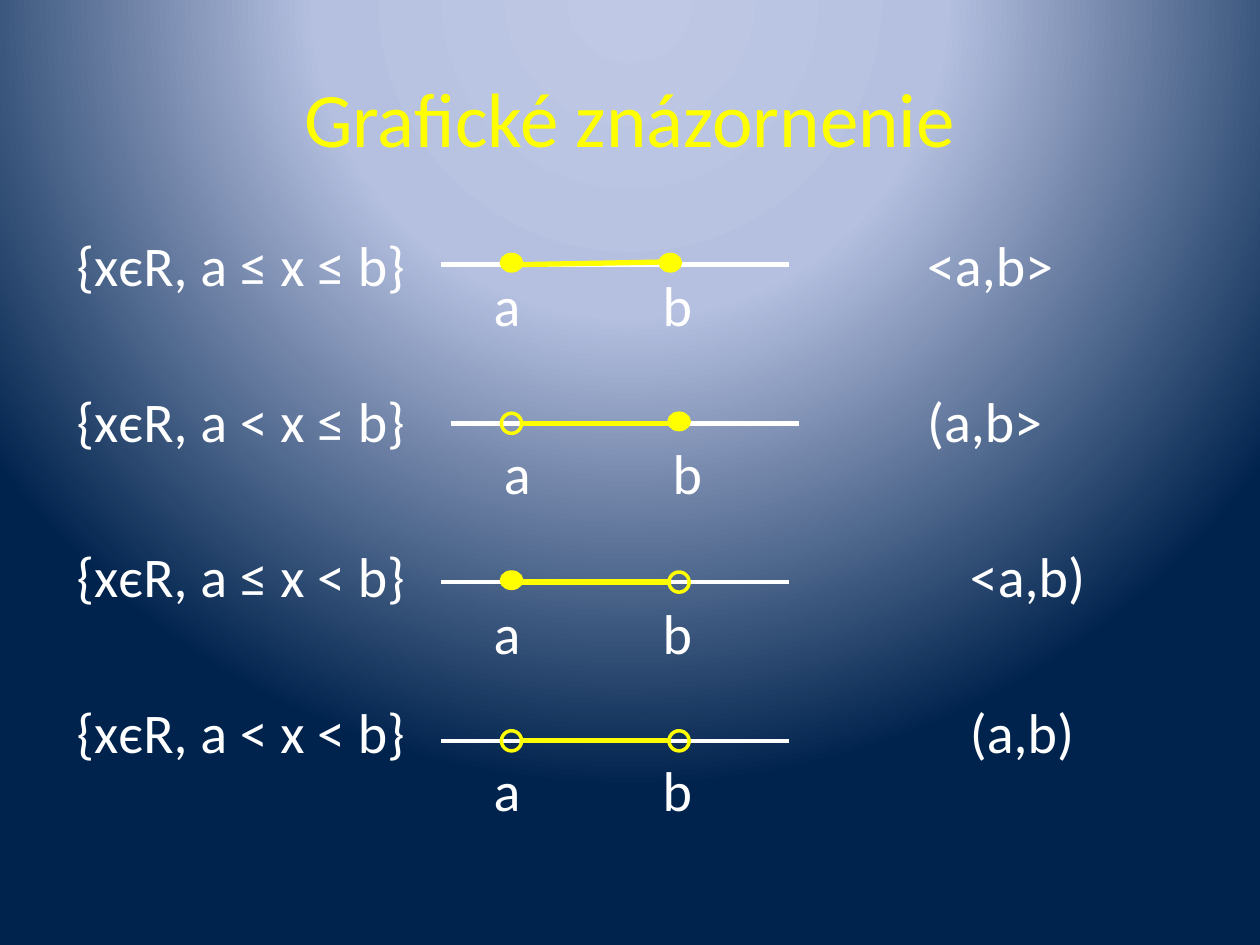
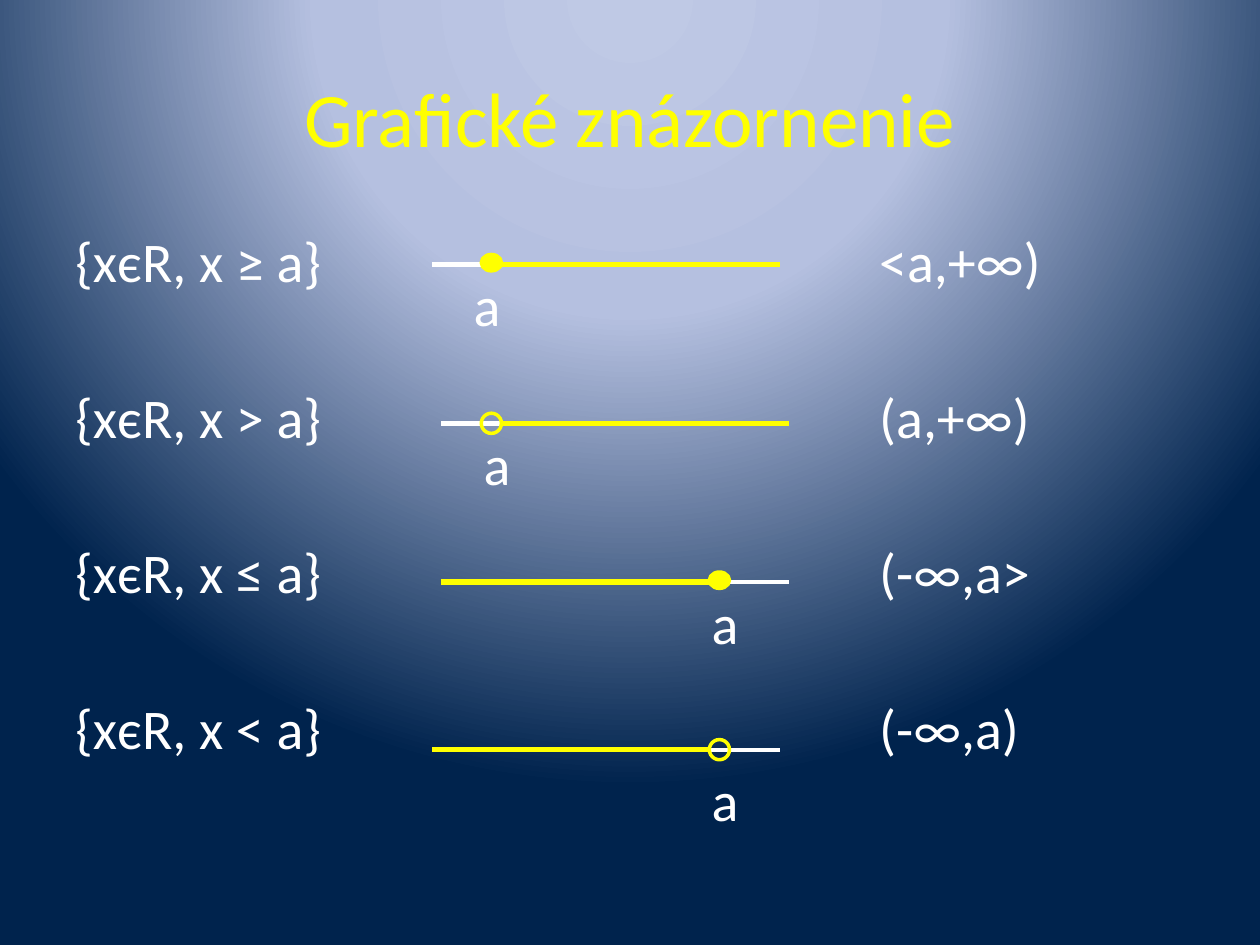
from dataclasses import dataclass

from lxml import etree
from pptx import Presentation
from pptx.dml.color import RGBColor
from pptx.enum.shapes import MSO_CONNECTOR, MSO_SHAPE
from pptx.enum.text import MSO_ANCHOR, PP_ALIGN
from pptx.oxml import parse_xml
from pptx.oxml.ns import nsdecls, qn
from pptx.util import Inches, Pt

STRAIGHT = MSO_CONNECTOR.STRAIGHT
OVAL = MSO_SHAPE.OVAL
MIDDLE = MSO_ANCHOR.MIDDLE
CENTER = PP_ALIGN.CENTER

FONT = "Calibri"
WHITE = "FFFFFF"
YELLOW = "FFFF00"
BACKGROUND_STOPS = [(0, "BFC9E5"), (40, "B5C0E0"), (100, "00234D")]

TITLE = "Grafické znázornenie"
AXIS_LENGTH = 2.76
FIRST_AXIS = 2.1
ROW_PITCH = 1.26
DOT_SIZE = 0.16
CLOSED_DOT_HEIGHT = 0.13
ROW_SPACING = 50.5


def color(hex_string):
    return RGBColor.from_string(hex_string)


@dataclass
class Point:
    letter: str
    dot_left: float
    label_left: float
    closed: bool


@dataclass
class Row:
    """One interval: set notation, interval notation and its number line."""
    set_text: str
    interval_text: str
    interval_left: float
    axis_left: float
    label_drop: float
    points: list
    side: str = "between"
    axis_shift: float = 0
    rise: float = 0


class IntervalDeck:
    def __init__(self):
        self.deck = Presentation()
        self.deck.slide_width = Inches(10)
        self.deck.slide_height = Inches(7.5)
        self.page = None
        self.set_background()

    def set_background(self):
        fill = self.deck.slide_master.background.fill
        fill.gradient()
        stops = "".join(
            f'<a:gs pos="{percent * 1000}"><a:srgbClr val="{shade}"/></a:gs>'
            for percent, shade in BACKGROUND_STOPS)
        gradient = parse_xml(
            f'<a:gradFill {nsdecls("a")} rotWithShape="1"><a:gsLst>{stops}</a:gsLst>'
            '<a:path path="circle">'
            '<a:fillToRect l="50000" t="-80000" r="50000" b="180000"/>'
            '</a:path></a:gradFill>')
        common = self.deck.slide_master.element.find(qn("p:cSld"))
        previous = common.find(".//" + qn("a:gradFill"))
        previous.getparent().replace(previous, gradient)

    def style(self, paragraph, size, shade):
        paragraph.font.name = FONT
        paragraph.font.size = Pt(size)
        paragraph.font.color.rgb = color(shade)

    def add_page(self, title):
        self.page = self.deck.slides.add_slide(self.deck.slide_layouts[5])
        box = self.page.shapes.title
        box.left, box.top = Inches(0.5), Inches(0.3)
        box.width, box.height = Inches(9), Inches(1.25)
        box.text_frame.text = title
        box.text_frame.vertical_anchor = MIDDLE
        paragraph = box.text_frame.paragraphs[0]
        paragraph.alignment = CENTER
        self.style(paragraph, 44, YELLOW)

    def text(self, left, top, width, height, lines):
        box = self.page.shapes.add_textbox(
            Inches(left), Inches(top), Inches(width), Inches(height))
        frame = box.text_frame
        frame.word_wrap = True
        frame.text = "\n".join(lines)
        for paragraph in frame.paragraphs:
            self.style(paragraph, 32, WHITE)
        return frame

    def notation(self, left, top, width, rows):
        """Set notation and interval notation, parted by a tab stop."""
        lines = [f"{row.set_text}\t{row.interval_text}" for row in rows]
        frame = self.text(left, top, width, 4.95, lines)
        for index, (paragraph, row) in enumerate(zip(frame.paragraphs, rows)):
            paragraph.space_before = Pt(ROW_SPACING if index else 0)
            stop = Inches(row.interval_left - left - 0.1)
            properties = paragraph._p.get_or_add_pPr()
            tabs = parse_xml(f'<a:tabLst {nsdecls("a")}>'
                             f'<a:tab pos="{stop}" algn="l"/></a:tabLst>')
            properties.find(qn("a:defRPr")).addprevious(tabs)

    def line(self, start, end, shade, weight):
        connector = self.page.shapes.add_connector(
            STRAIGHT, *(Inches(value) for value in (*start, *end)))
        connector.line.color.rgb = color(shade)
        connector.line.width = Pt(weight)
        etree.SubElement(connector._element.spPr, qn("a:effectLst"))

    def dot(self, left, top, closed):
        height = CLOSED_DOT_HEIGHT if closed else DOT_SIZE
        oval = self.page.shapes.add_shape(
            OVAL, Inches(left), Inches(top), Inches(DOT_SIZE), Inches(height))
        oval.shadow.inherit = False
        oval.line.color.rgb = color(YELLOW)
        oval.line.width = Pt(2)
        if closed:
            oval.fill.solid()
            oval.fill.fore_color.rgb = color(YELLOW)
        else:
            oval.fill.background()

    def number_line(self, row, y):
        axis_right = row.axis_left + AXIS_LENGTH
        first, last = row.points[0], row.points[-1]
        start = row.axis_left if row.side == "left" else first.dot_left + DOT_SIZE
        end = axis_right if row.side == "right" else last.dot_left
        self.line((row.axis_left, y), (axis_right, y), WHITE, 2.5)
        self.line((start, y), (end, y - row.rise), YELLOW, 3)
        for point in row.points:
            self.dot(point.dot_left, y - DOT_SIZE / 2, point.closed)
            self.text(point.label_left, y + row.label_drop, 0.31, 0.64, [point.letter])

    def interval_page(self, left, top, width, rows):
        self.add_page(TITLE)
        self.notation(left, top, width, rows)
        for index, row in enumerate(rows):
            self.number_line(row, FIRST_AXIS + index * ROW_PITCH + row.axis_shift)


BOUNDED = [
    Row("{xєR, a ≤ x ≤ b}", "<a,b>", 7.36, 3.5, 0,
        [Point("a", 3.98, 3.82, True), Point("b", 5.24, 5.16, True)], rise=0.02),
    Row("{xєR, a < x ≤ b}", "(a,b>", 7.36, 3.58, 0.07,
        [Point("a", 3.98, 3.9, False), Point("b", 5.31, 5.24, True)]),
    Row("{xєR, a ≤ x < b}", "<a,b)", 7.7, 3.5, 0.08,
        [Point("a", 3.98, 3.82, True), Point("b", 5.31, 5.16, False)]),
    Row("{xєR, a < x < b}", "(a,b)", 7.7, 3.5, 0.07,
        [Point("a", 3.98, 3.82, False), Point("b", 5.31, 5.16, False)]),
]

UNBOUNDED = [
    Row("{xєR, x ≥ a}", "<a,+∞)", 6.98, 3.43, 0,
        [Point("a", 3.82, 3.66, True)], "right"),
    Row("{xєR, x > a}", "(a,+∞)", 6.98, 3.5, 0,
        [Point("a", 3.82, 3.74, False)], "right"),
    Row("{xєR, x ≤ a}", "(-∞,a>", 6.98, 3.5, 0,
        [Point("a", 5.63, 5.55, True)], "left"),
    Row("{xєR, x < a}", "(-∞,a)", 6.98, 3.43, 0.08,
        [Point("a", 5.63, 5.55, False)], "left", axis_shift=0.07),
]


def main():
    intervals = IntervalDeck()
    intervals.interval_page(0.51, 1.78, 8.74, BOUNDED)
    intervals.interval_page(0.5, 1.75, 9, UNBOUNDED)
    intervals.deck.save("out.pptx")


if __name__ == "__main__":
    main()
